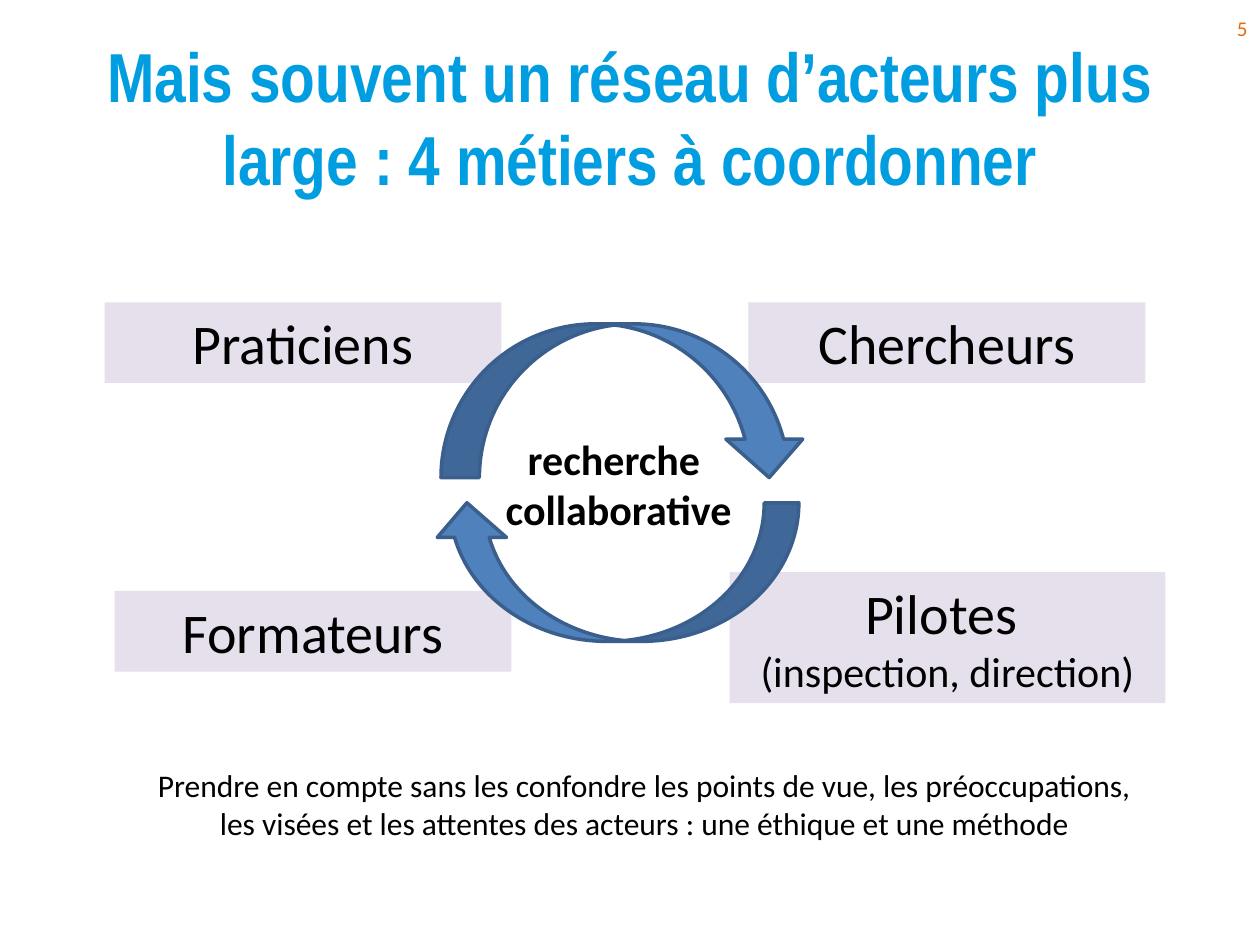
from dataclasses import dataclass

from pptx import Presentation
from pptx.dml.color import RGBColor
from pptx.enum.shapes import MSO_SHAPE
from pptx.enum.text import MSO_ANCHOR, PP_ALIGN
from pptx.slide import Slide
from pptx.util import Inches, Pt

RECTANGLE = MSO_SHAPE.RECTANGLE
CURVED_ARROW = MSO_SHAPE.CURVED_DOWN_ARROW
TOP, MIDDLE = MSO_ANCHOR.TOP, MSO_ANCHOR.MIDDLE
CENTER, RIGHT = PP_ALIGN.CENTER, PP_ALIGN.RIGHT

BLACK = RGBColor(0x00, 0x00, 0x00)
TITLE_BLUE = RGBColor(0x00, 0x9E, 0xE0)
ORANGE = RGBColor(0xE4, 0x6C, 0x0A)
LAVENDER = RGBColor(0xE6, 0xE0, 0xEC)
ARROW_BLUE = RGBColor(0x4F, 0x81, 0xBD)
ARROW_EDGE = RGBColor(0x3A, 0x5F, 0x8C)


@dataclass
class SlideBuilder:
    """Draws the elements of one slide in a shared style."""

    slide: Slide
    font: str = "Calibri"

    def fill_text(self, frame, text, sizes, color=BLACK, bold=False, font=None,
                  align=CENTER, anchor=TOP, wrap=True):
        frame.text = text
        frame.word_wrap = wrap
        frame.vertical_anchor = anchor
        for paragraph in frame.paragraphs:
            paragraph.alignment = align
            for run, size in zip(paragraph.runs, sizes):
                run.font.name = font or self.font
                run.font.size = Pt(size)
                run.font.bold = bold
                run.font.color.rgb = color

    def text(self, box, text, size, **style):
        label = self.slide.shapes.add_textbox(*map(Inches, box))
        self.fill_text(label.text_frame, text, [size], **style)

    def shape(self, kind, box, fill):
        shape = self.slide.shapes.add_shape(kind, *map(Inches, box))
        shape.shadow.inherit = False
        shape.fill.solid()
        shape.fill.fore_color.rgb = fill
        return shape

    def role(self, box, text, sizes=(32,)):
        panel = self.shape(RECTANGLE, box, LAVENDER)
        panel.line.fill.background()
        self.fill_text(panel.text_frame, text, sizes)

    def cycle_arrow(self, box, rotation=0):
        arrow = self.shape(CURVED_ARROW, box, ARROW_BLUE)
        arrow.line.color.rgb = ARROW_EDGE
        arrow.line.width = Pt(2)
        arrow.rotation = rotation


def main():
    presentation = Presentation()
    presentation.slide_width = Inches(10)
    presentation.slide_height = Inches(7.5)
    blank = presentation.slide_layouts[6]
    builder = SlideBuilder(presentation.slides.add_slide(blank))

    builder.text((0.5, 0.3, 9, 1.25),
                 "Mais souvent un réseau d’acteurs plus large : 4 métiers à coordonner",
                 39.6, color=TITLE_BLUE, bold=True, font="Arial Narrow", anchor=MIDDLE)
    builder.text((7.67, 0.02, 2.33, 0.4), "5", 12,
                 color=ORANGE, align=RIGHT, anchor=MIDDLE)

    builder.role((0.83, 2.4, 3.15, 0.64), "Praticiens")
    builder.role((5.94, 2.4, 3.15, 0.64), "Chercheurs")
    builder.role((5.79, 4.54, 3.46, 1.04),
                 "Pilotes \v(inspection, direction)", (32, 24))
    builder.role((0.91, 4.69, 3.15, 0.64), "Formateurs")

    builder.text((1.14, 6.03, 7.95, 0.71),
                 "Prendre en compte sans les confondre les points de vue, "
                 "les préoccupations, les visées et les attentes des acteurs : "
                 "une éthique et une méthode", 18)

    builder.cycle_arrow((3.5, 2.57, 2.91, 1.22))
    builder.cycle_arrow((3.43, 3.99, 2.91, 1.1), rotation=180)
    builder.text((3.9, 3.39, 2.02, 0.91), "recherche \ncollaborative", 24,
                 bold=True, wrap=False)

    presentation.save("out.pptx")


if __name__ == "__main__":
    main()
